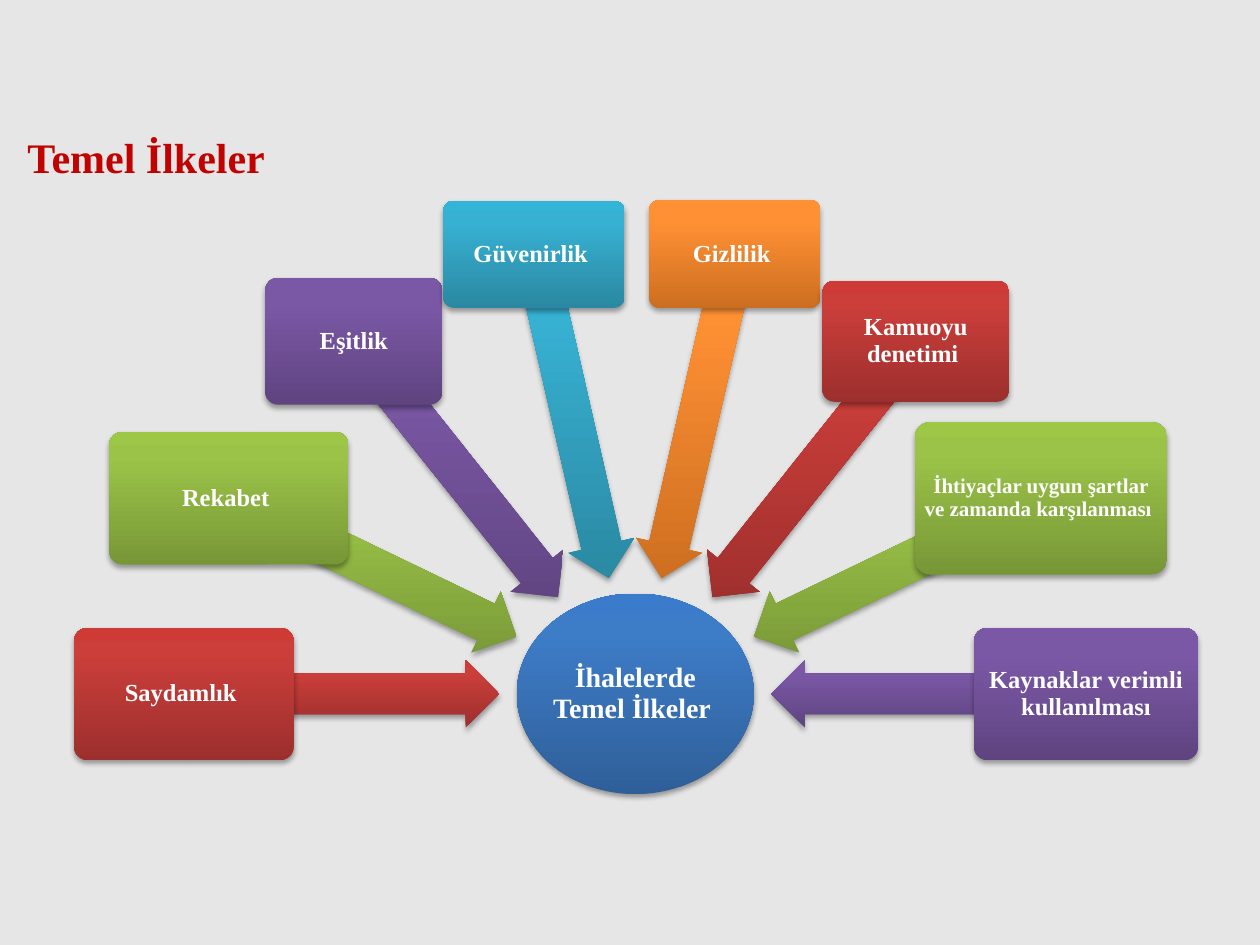
import math

from pptx import Presentation
from pptx import util as u
from pptx.dml.color import RGBColor
from pptx.enum import shapes, text
from pptx.oxml import parse_xml
from pptx.oxml.ns import nsdecls, qn

FONT = "Times New Roman"
WHITE = "FFFFFF"

# Gradient colours, from the bottom edge to the top edge
BLUE = ("2F5F99", "3D7CC7", "3A7CCB")
RED = ("9C2F2D", "CB3E3A", "CE3B37")
GREEN = ("779737", "9BC348", "9DC746")
PURPLE = ("5F4480", "7B58A6", "7C57A8")
TEAL = ("2A88A2", "37B1D2", "34B4D6")
ORANGE = ("CC6E20", "FF9034", "FF9136")

# Central ellipse and the arrows that point at it
HUB_X, HUB_Y = 363, 396.5
HUB_RX, HUB_RY = 67.7, 57.3
ARROW_GAP, ARROW_HEIGHT = 10, 38.6

# Wording, text size, colours, box (left, top, width, height), arrow length
PRINCIPLES = [
    ("Saydamlık ", 14, RED, (42.3, 358.8, 125.5, 75.6), 180),
    ("Rekabet ", 14, GREEN, (62.4, 246.8, 136.8, 75.8), 182),
    ("Eşitlik", 14, PURPLE, (151.6, 158.8, 101.2, 72.5), 186.5),
    ("Güvenirlik ", 14, TEAL, (253.2, 114.7, 103.8, 61.2), 189.5),
    ("Gizlilik ", 14, ORANGE, (370.9, 114.2, 98, 62), 189.5),
    ("Kamuoyu denetimi ", 14, RED, (469.9, 160.5, 106.9, 69.1), 186),
    ("İhtiyaçlar uygun şartlar ve zamanda karşılanması ", 12, GREEN,
     (522.8, 241.2, 144.1, 87.1), 181.5),
    ("Kaynaklar verimli kullanılması", 14, PURPLE,
     (556.6, 358.8, 128, 75.6), 179.5),
]


def color(hex_value):
    return RGBColor.from_string(hex_value)


def write(shape, wording, size, hex_value, align, insets):
    frame = shape.text_frame
    frame.word_wrap = True
    frame.vertical_anchor = text.MSO_ANCHOR.MIDDLE
    frame.margin_left = frame.margin_right = u.Pt(insets[0])
    frame.margin_top = frame.margin_bottom = u.Pt(insets[1])
    paragraph = frame.paragraphs[0]
    paragraph.alignment = align
    paragraph.line_spacing = 0.9
    run = paragraph.add_run()
    run.text = wording
    run.font.name = FONT
    run.font.size = u.Pt(size)
    run.font.bold = True
    run.font.color.rgb = color(hex_value)


def add_glossy(slide, kind, box, colours):
    """Borderless shape with a vertical three-stop gradient and soft shadow."""
    shape = slide.shapes.add_shape(kind, *(u.Pt(length) for length in box))
    shape.line.fill.background()
    shape.fill.gradient()
    stops = "".join(
        f'<a:gs pos="{pos}"><a:srgbClr val="{value}"/></a:gs>'
        for pos, value in zip((0, 80000, 100000), colours))
    properties = shape.element.spPr
    properties.replace(properties.find(qn("a:gradFill")), parse_xml(
        f'<a:gradFill {nsdecls("a")} rotWithShape="0"><a:gsLst>{stops}</a:gsLst>'
        '<a:lin ang="16200000" scaled="0"/></a:gradFill>'))
    shape.shadow.inherit = False
    properties.find(qn("a:effectLst")).append(parse_xml(
        f'<a:outerShdw {nsdecls("a")} blurRad="{u.Pt(3.1)}" dist="{u.Pt(1.8)}"'
        ' dir="5400000" rotWithShape="0"><a:srgbClr val="000000">'
        '<a:alpha val="35000"/></a:srgbClr></a:outerShdw>'))
    return shape


def add_title(slide, wording):
    title = slide.shapes.add_textbox(
        u.Pt(8.6), u.Pt(74.2), u.Pt(685.4), u.Pt(33.8))
    write(title, wording, 24, "C00300", text.PP_ALIGN.LEFT, (7.2, 3.6))


def add_hub(slide, wording):
    box = (HUB_X - HUB_RX, HUB_Y - HUB_RY, 2 * HUB_RX, 2 * HUB_RY)
    hub = add_glossy(slide, shapes.MSO_SHAPE.OVAL, box, BLUE)
    write(hub, wording, 16, WHITE, text.PP_ALIGN.CENTER, (0.7, 0.7))


def add_arrow(slide, degrees, length, colours):
    """Arrow on the ray at this angle, its tip a fixed gap from the hub."""
    angle = math.radians(degrees)
    edge = 1 / math.hypot(math.cos(angle) / HUB_RX, math.sin(angle) / HUB_RY)
    reach = edge + ARROW_GAP + length / 2
    left = HUB_X + reach * math.cos(angle) - length / 2
    top = HUB_Y + reach * math.sin(angle) - ARROW_HEIGHT / 2
    arrow = add_glossy(slide, shapes.MSO_SHAPE.LEFT_ARROW,
                       (left, top, length, ARROW_HEIGHT), colours)
    arrow.adjustments[0] = 0.6
    arrow.adjustments[1] = 0.5
    arrow.rotation = degrees % 360


def add_principle(slide, wording, size, colours, box):
    principle = add_glossy(
        slide, shapes.MSO_SHAPE.ROUNDED_RECTANGLE, box, colours)
    principle.adjustments[0] = 0.1
    write(principle, wording, size, WHITE, text.PP_ALIGN.CENTER, (2.1, 2.1))


def main():
    deck = Presentation()
    deck.slide_width, deck.slide_height = u.Pt(720), u.Pt(540)
    slide = deck.slides.add_slide(deck.slide_layouts[6])
    slide.background.fill.solid()
    slide.background.fill.fore_color.rgb = color("E7E6E6")

    add_title(slide, "Temel İlkeler")
    add_hub(slide, "İhalelerde Temel İlkeler ")

    # Principles fan out over the upper half circle, from left to right
    step = 180 / (len(PRINCIPLES) - 1)
    for index, (wording, size, colours, box, length) in enumerate(PRINCIPLES):
        add_arrow(slide, 180 + index * step, length, colours)
        add_principle(slide, wording, size, colours, box)

    deck.save("out.pptx")


if __name__ == "__main__":
    main()
